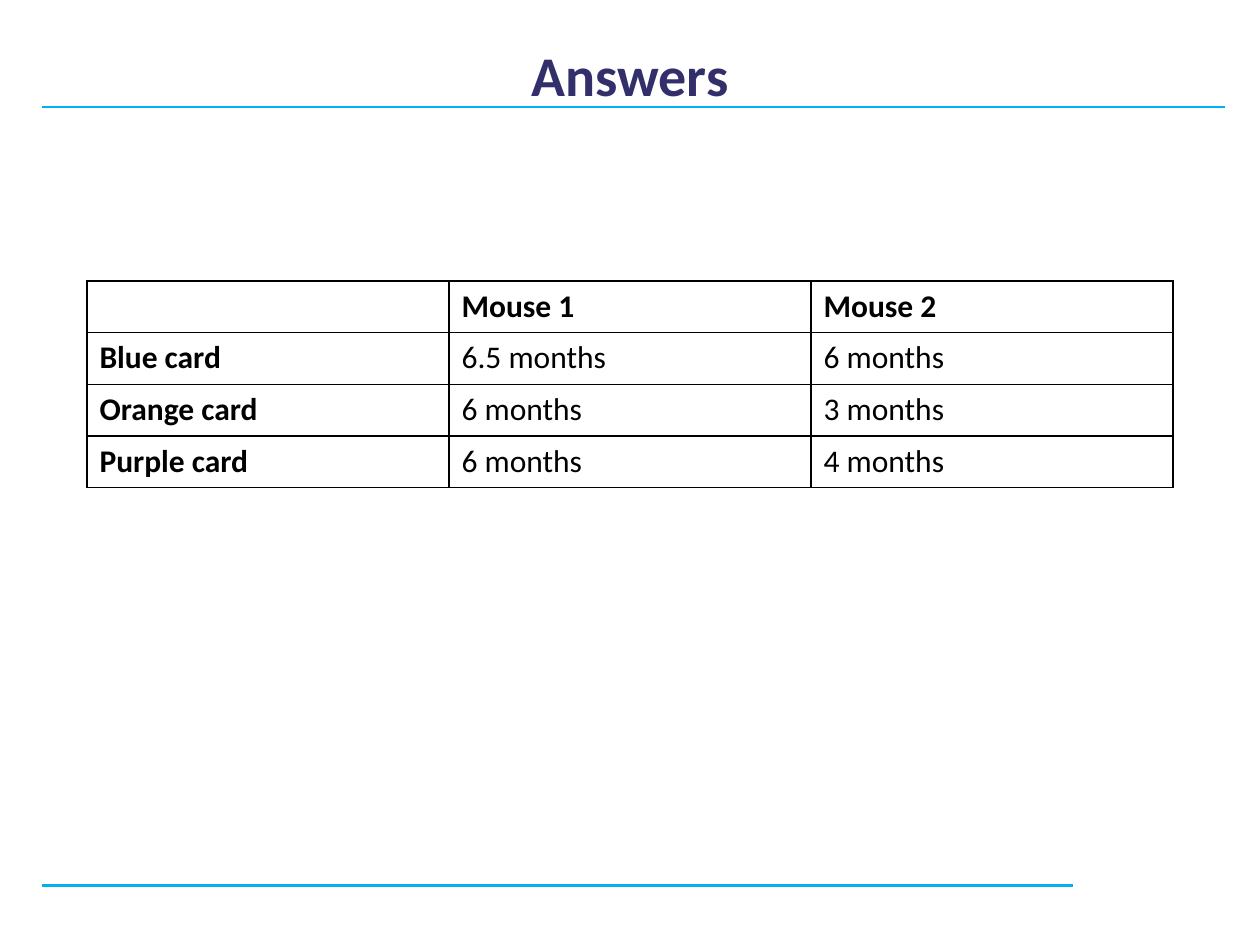
from lxml import etree
from pptx import Presentation
from pptx.dml.color import RGBColor
from pptx.enum.shapes import MSO_CONNECTOR
from pptx.enum.text import MSO_ANCHOR, PP_ALIGN
from pptx.oxml.ns import qn
from pptx.util import Inches, Pt

TITLE = "Answers"
ROWS = [
    ("", "Mouse 1", "Mouse 2"),
    ("Blue card", "6.5 months", "6 months"),
    ("Orange card", "6 months", "3 months"),
    ("Purple card", "6 months", "4 months"),
]
RULES = [(0.33, 8.52, 7.03), (0.33, 9.72, 0.85)]

FONT = "Calibri"
NAVY = RGBColor(0x33, 0x2F, 0x6B)
CYAN = RGBColor(0x00, 0xB0, 0xF0)
BLACK = RGBColor(0, 0, 0)
STRAIGHT = MSO_CONNECTOR.STRAIGHT
CENTER = PP_ALIGN.CENTER
MIDDLE = MSO_ANCHOR.MIDDLE

LEFT, WIDTH = Inches(0.69), Inches(8.62)
TABLE_TOP, ROW_HEIGHT = Inches(2.23), Inches(0.41)


def set_font(p, size, color, bold):
    p.font.name = FONT
    p.font.size = Pt(size)
    p.font.color.rgb = color
    p.font.bold = bold


def add_rule(slide, x1, x2, y):
    line = slide.shapes.add_connector(
        STRAIGHT, Inches(x1), Inches(y), Inches(x2), Inches(y))
    line.line.color.rgb = CYAN
    line.line.width = Pt(1.5)
    etree.SubElement(line._element.spPr, qn("a:effectLst"))


def add_borders(cell):
    tcPr = cell._tc.get_or_add_tcPr()
    for side in ("a:lnL", "a:lnR", "a:lnT", "a:lnB"):
        ln = etree.SubElement(tcPr, qn(side), w=str(Pt(1)))
        fill = etree.SubElement(ln, qn("a:solidFill"))
        etree.SubElement(fill, qn("a:srgbClr"), val=str(BLACK))


def add_table(slide):
    n_rows, n_cols = len(ROWS), len(ROWS[0])
    table = slide.shapes.add_table(
        n_rows, n_cols, LEFT, TABLE_TOP, WIDTH, ROW_HEIGHT * n_rows).table
    table.horz_banding = False
    for i, row in enumerate(ROWS):
        for j, text in enumerate(row):
            cell = table.cell(i, j)
            add_borders(cell)
            cell.fill.background()
            cell.text = text
            set_font(cell.text_frame.paragraphs[0], 18, BLACK, i == 0 or j == 0)


prs = Presentation()
prs.slide_width, prs.slide_height = Inches(10), Inches(7.5)
slide = prs.slides.add_slide(prs.slide_layouts[5])

for rule in RULES:
    add_rule(slide, *rule)

title = slide.shapes.title
title.left, title.top, title.width, title.height = LEFT, Inches(0.4), WIDTH, Inches(0.45)
tf = title.text_frame
tf.text = TITLE
tf.vertical_anchor = MIDDLE
p = tf.paragraphs[0]
p.alignment = CENTER
p.line_spacing = 0.9
set_font(p, 32, NAVY, True)

add_table(slide)
prs.save("out.pptx")
